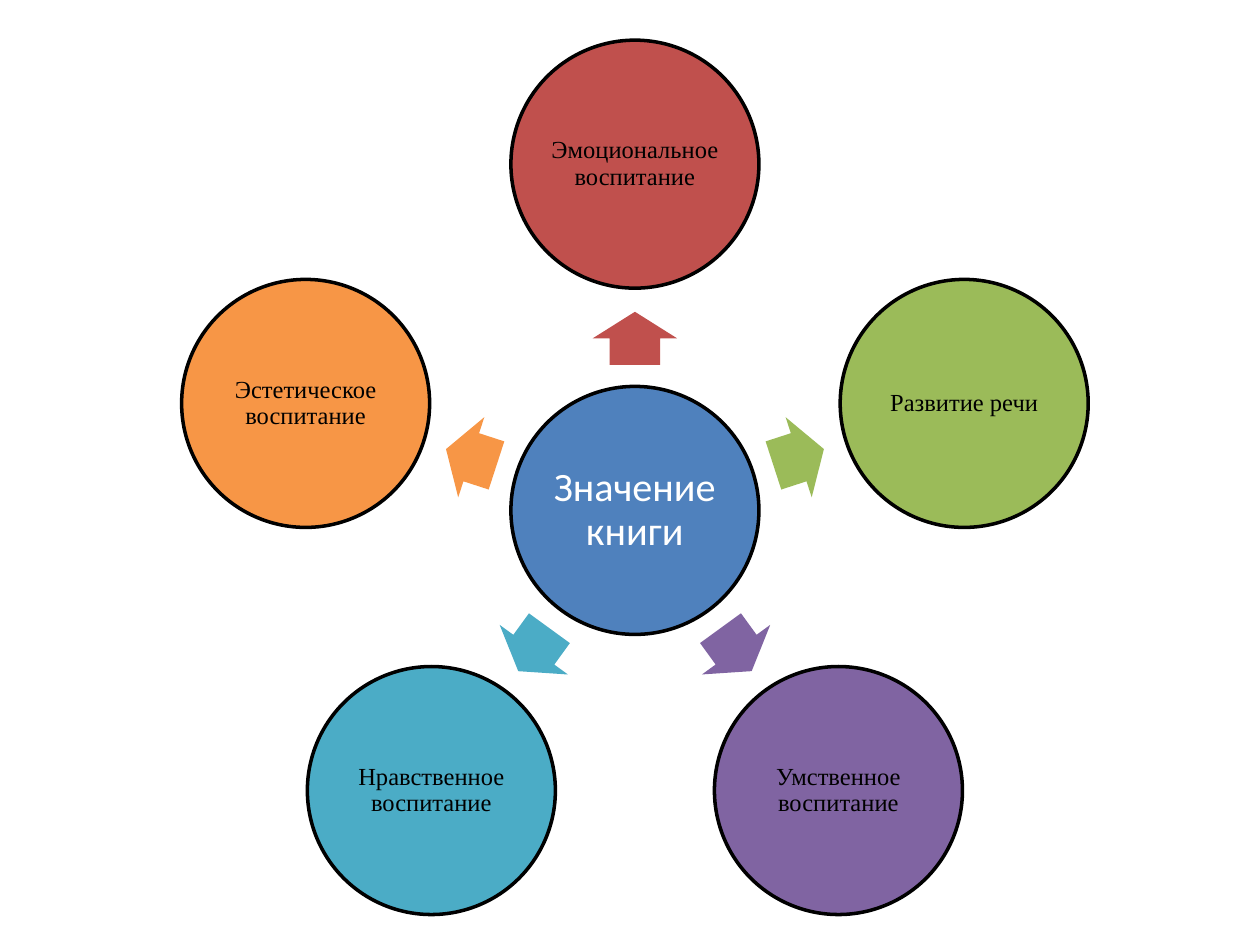
import math
from dataclasses import dataclass

import pptx
import pptx.dml.color
import pptx.enum.shapes
import pptx.enum.text
import pptx.util
from pptx.util import Cm

COLORS = {
    "blue": "4F81BD",
    "red": "C0504D",
    "green": "9BBB59",
    "purple": "8064A2",
    "teal": "4BACC6",
    "orange": "F79646",
    "black": "000000",
    "white": "FFFFFF",
}
CENTER_X, CENTER_Y = 12.8, 10.29
CIRCLE_SIZE = 5
ORBIT_RADIUS = 6.98
ARROW_RADIUS = 3.47
ARROW_LENGTH, ARROW_WIDTH = 1.07, 1.7


@dataclass
class Topic:
    text: str
    color: str


TOPICS = [
    Topic("Эмоциональное воспитание", "red"),
    Topic("Развитие речи", "green"),
    Topic("Умственное воспитание", "purple"),
    Topic("Нравственное воспитание", "teal"),
    Topic("Эстетическое воспитание", "orange"),
]


def rgb(name: str) -> pptx.dml.color.RGBColor:
    return pptx.dml.color.RGBColor.from_string(COLORS[name])


def orbit_point(radius: float, angle: float) -> tuple[float, float]:
    """Return the point at a clockwise angle in degrees, 0 pointing right."""
    a = math.radians(angle)
    return CENTER_X + radius * math.cos(a), CENTER_Y + radius * math.sin(a)


def add_centered(slide, kind, x: float, y: float, w: float, h: float, color: str):
    """Add a filled shape whose middle is at x, y."""
    sp = slide.shapes.add_shape(kind, Cm(x - w / 2), Cm(y - h / 2), Cm(w), Cm(h))
    sp.shadow.inherit = False
    sp.fill.solid()
    sp.fill.fore_color.rgb = rgb(color)
    return sp


def add_circle(slide, x: float, y: float, topic: Topic, font: str, size: int,
               font_color: str, inset: float) -> None:
    sp = add_centered(slide, pptx.enum.shapes.MSO_SHAPE.OVAL, x, y,
                      CIRCLE_SIZE, CIRCLE_SIZE, topic.color)
    sp.line.color.rgb = rgb("black")
    sp.line.width = pptx.util.Pt(2)
    tf = sp.text_frame
    tf.word_wrap = True
    tf.vertical_anchor = pptx.enum.text.MSO_ANCHOR.MIDDLE
    tf.margin_left = tf.margin_right = tf.margin_top = tf.margin_bottom = Cm(inset)
    p = tf.paragraphs[0]
    p.text = topic.text
    p.alignment = pptx.enum.text.PP_ALIGN.CENTER
    p.line_spacing = 0.9
    p.font.name = font
    p.font.size = pptx.util.Pt(size)
    p.font.color.rgb = rgb(font_color)


def add_arrow(slide, angle: float, color: str) -> None:
    x, y = orbit_point(ARROW_RADIUS, angle)
    sp = add_centered(slide, pptx.enum.shapes.MSO_SHAPE.RIGHT_ARROW, x, y,
                      ARROW_LENGTH, ARROW_WIDTH, color)
    sp.line.fill.background()
    sp.adjustments[0] = 0.6
    sp.adjustments[1] = 0.5
    sp.rotation = angle % 360


def main() -> None:
    prs = pptx.Presentation()
    prs.slide_width, prs.slide_height = Cm(25.4), Cm(19.05)
    slide = prs.slides.add_slide(prs.slide_layouts[6])

    add_circle(slide, CENTER_X, CENTER_Y, Topic("Значение книги", "blue"),
               "Calibri", 23, "white", 0.08)
    for i, topic in enumerate(TOPICS):
        angle = -90 + i * 360 / len(TOPICS)
        add_arrow(slide, angle, topic.color)
        x, y = orbit_point(ORBIT_RADIUS, angle)
        add_circle(slide, x, y, topic, "Times New Roman", 14, "black", 0.05)

    prs.save("out.pptx")


if __name__ == "__main__":
    main()
